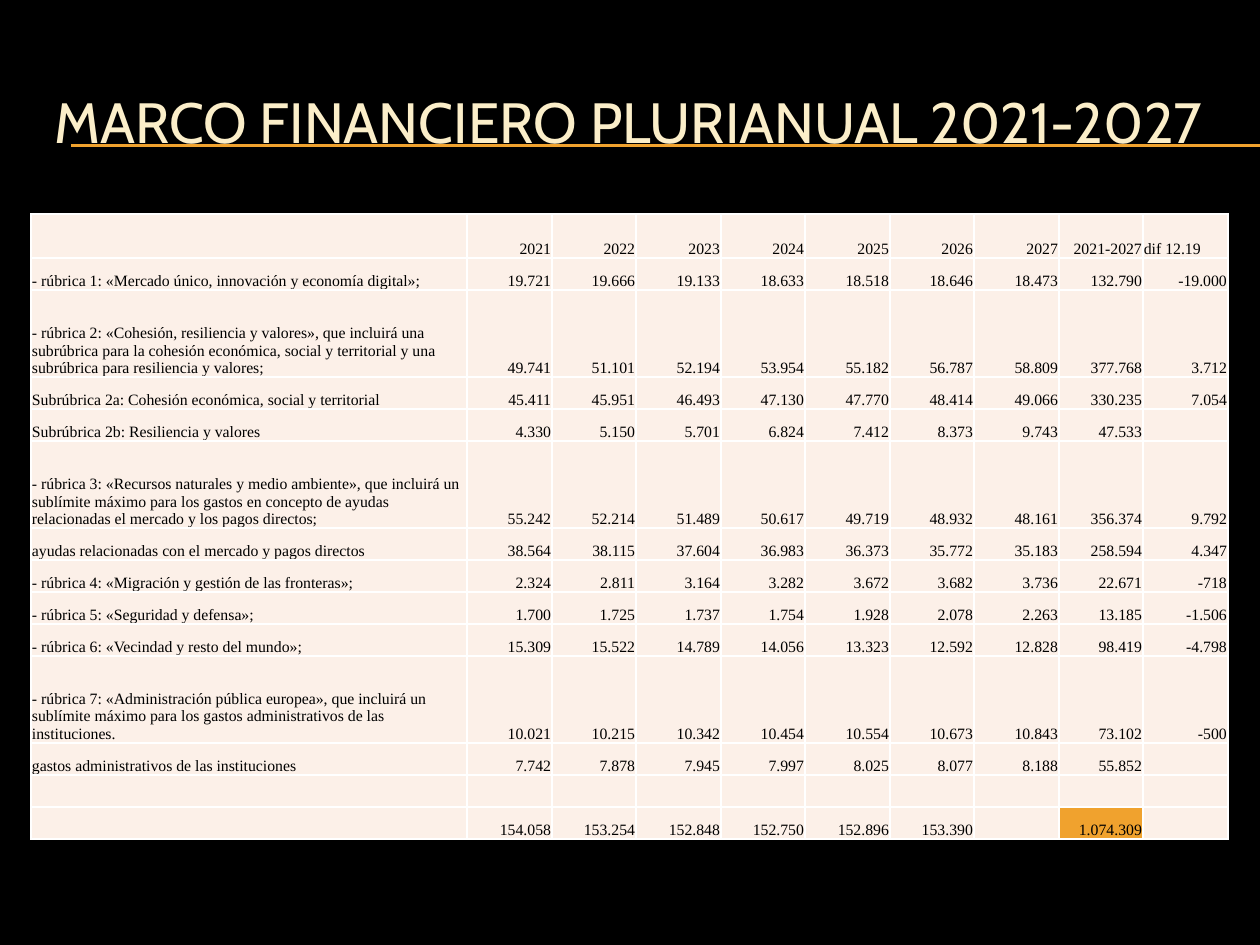
from lxml.etree import SubElement
from pptx import Presentation
from pptx.dml.color import RGBColor
from pptx.enum.shapes import MSO_CONNECTOR as Connector
from pptx.enum.text import MSO_ANCHOR as Anchor, PP_ALIGN as Align
from pptx.oxml.ns import qn
from pptx.util import Pt

EMU_PER_PX = 914400 / 126
ORANGE = "F0A22E"
CREAM = "FBEEC9"
CELL_FILL = "FCF0E8"
TITLE = "MARCO FINANCIERO PLURIANUAL 2021-2027"
TOTAL = "1.074.309"
LEFT_ALIGNED_HEADER = "dif 12.19"
LABEL_WIDTH = 436
VALUES_WIDTH = 761
HEADER_HEIGHT, SHORT_ROW, TALL_ROW = 44, 32, 87
WRAPPED_LABEL_LENGTH = 100

BUDGET = [
    ("", "2021|2022|2023|2024|2025|2026|2027|2021-2027|dif 12.19"),
    ("- rúbrica 1: «Mercado único, innovación y economía digital»;",
     "19.721|19.666|19.133|18.633|18.518|18.646|18.473|132.790|-19.000"),
    ("- rúbrica 2: «Cohesión, resiliencia y valores», que incluirá una subrúbrica para la "
     "cohesión económica, social y territorial y una subrúbrica para resiliencia y valores;",
     "49.741|51.101|52.194|53.954|55.182|56.787|58.809|377.768|3.712"),
    ("Subrúbrica 2a: Cohesión económica, social y territorial",
     "45.411|45.951|46.493|47.130|47.770|48.414|49.066|330.235|7.054"),
    ("Subrúbrica 2b: Resiliencia y valores",
     "4.330|5.150|5.701|6.824|7.412|8.373|9.743|47.533|"),
    ("- rúbrica 3: «Recursos naturales y medio ambiente», que incluirá un sublímite máximo para "
     "los gastos en concepto de ayudas relacionadas el mercado y los pagos directos;",
     "55.242|52.214|51.489|50.617|49.719|48.932|48.161|356.374|9.792"),
    ("ayudas relacionadas con el mercado y pagos directos",
     "38.564|38.115|37.604|36.983|36.373|35.772|35.183|258.594|4.347"),
    ("- rúbrica 4: «Migración y gestión de las fronteras»;",
     "2.324|2.811|3.164|3.282|3.672|3.682|3.736|22.671|-718"),
    ("- rúbrica 5: «Seguridad y defensa»;",
     "1.700|1.725|1.737|1.754|1.928|2.078|2.263|13.185|-1.506"),
    ("- rúbrica 6: «Vecindad y resto del mundo»;",
     "15.309|15.522|14.789|14.056|13.323|12.592|12.828|98.419|-4.798"),
    ("- rúbrica 7: «Administración pública europea», que incluirá un sublímite máximo para "
     "los gastos administrativos de las instituciones.",
     "10.021|10.215|10.342|10.454|10.554|10.673|10.843|73.102|-500"),
    ("gastos administrativos de las instituciones",
     "7.742|7.878|7.945|7.997|8.025|8.077|8.188|55.852|"),
    ("", "||||||||"),
    ("", "154.058|153.254|152.848|152.750|152.896|153.390||1.074.309|"),
]


def px(length):
    return round(length * EMU_PER_PX)


def color(value):
    return RGBColor.from_string(value)


def format_run(run, size, font_name, font_color):
    run.font.size = Pt(size)
    run.font.name = font_name
    run.font.color.rgb = color(font_color)


def add_rule(slide, y):
    rule = slide.shapes.add_connector(Connector.STRAIGHT, px(71), px(y), px(1260), px(y))
    rule.line.color.rgb = color(ORANGE)
    rule.line.width = Pt(0.75)
    SubElement(rule._element.spPr, qn("a:effectLst"))


def add_title(slide):
    title = slide.shapes.add_textbox(px(42), px(63), px(1197), px(116))
    text_frame = title.text_frame
    text_frame.word_wrap = True
    text_frame.vertical_anchor = Anchor.MIDDLE
    text_frame.text = TITLE
    format_run(text_frame.paragraphs[0].runs[0], 32.4, "Cabin", CREAM)


def add_borders(cell, border_color):
    properties = cell._tc.get_or_add_tcPr()
    for side in ("lnL", "lnR", "lnT", "lnB"):
        border = SubElement(properties, qn(f"a:{side}"), w=str(Pt(1)))
        fill = SubElement(border, qn("a:solidFill"))
        SubElement(fill, qn("a:srgbClr"), val=border_color)


def fill_cell(cell, text, align):
    add_borders(cell, "FFFFFF")
    cell.fill.solid()
    cell.fill.fore_color.rgb = color(ORANGE if text == TOTAL else CELL_FILL)
    cell.margin_left = cell.margin_right = cell.margin_top = px(1)
    cell.margin_bottom = 0
    cell.vertical_anchor = Anchor.BOTTOM
    paragraph = cell.text_frame.paragraphs[0]
    paragraph.text = text
    paragraph.alignment = align
    for run in paragraph.runs:
        format_run(run, 9, "Times New Roman", "000000")
    if not text:
        SubElement(paragraph._p, qn("a:endParaRPr"), sz="900")


def row_height(index, label):
    if index == 0:
        return HEADER_HEIGHT
    return TALL_ROW if len(label) > WRAPPED_LABEL_LENGTH else SHORT_ROW


def add_budget_table(slide):
    rows = [[label, *values.split("|")] for label, values in BUDGET]
    heights = [row_height(index, row[0]) for index, row in enumerate(rows)]
    value_count = len(rows[0]) - 1
    edges = [round(VALUES_WIDTH * i / value_count) for i in range(value_count + 1)]
    widths = [LABEL_WIDTH] + [right - left for left, right in zip(edges, edges[1:])]
    frame = slide.shapes.add_table(len(rows), len(widths), px(31), px(214),
                                   px(sum(widths)), px(sum(heights)))
    table = frame.table
    table.first_row = table.horz_banding = False
    for column, width in zip(table.columns, widths):
        column.width = px(width)
    for row, height, texts in zip(table.rows, heights, rows):
        row.height = px(height)
        for index, (cell, text) in enumerate(zip(row.cells, texts)):
            is_left = index == 0 or text == LEFT_ALIGNED_HEADER
            fill_cell(cell, text, Align.LEFT if is_left else Align.RIGHT)


def main():
    presentation = Presentation()
    presentation.slide_width = px(1260)
    presentation.slide_height = px(945)
    slide = presentation.slides.add_slide(presentation.slide_layouts[6])
    slide.background.fill.solid()
    slide.background.fill.fore_color.rgb = color("000000")
    for y in (145, 146):
        add_rule(slide, y)
    add_title(slide)
    add_budget_table(slide)
    presentation.save("out.pptx")


if __name__ == "__main__":
    main()
